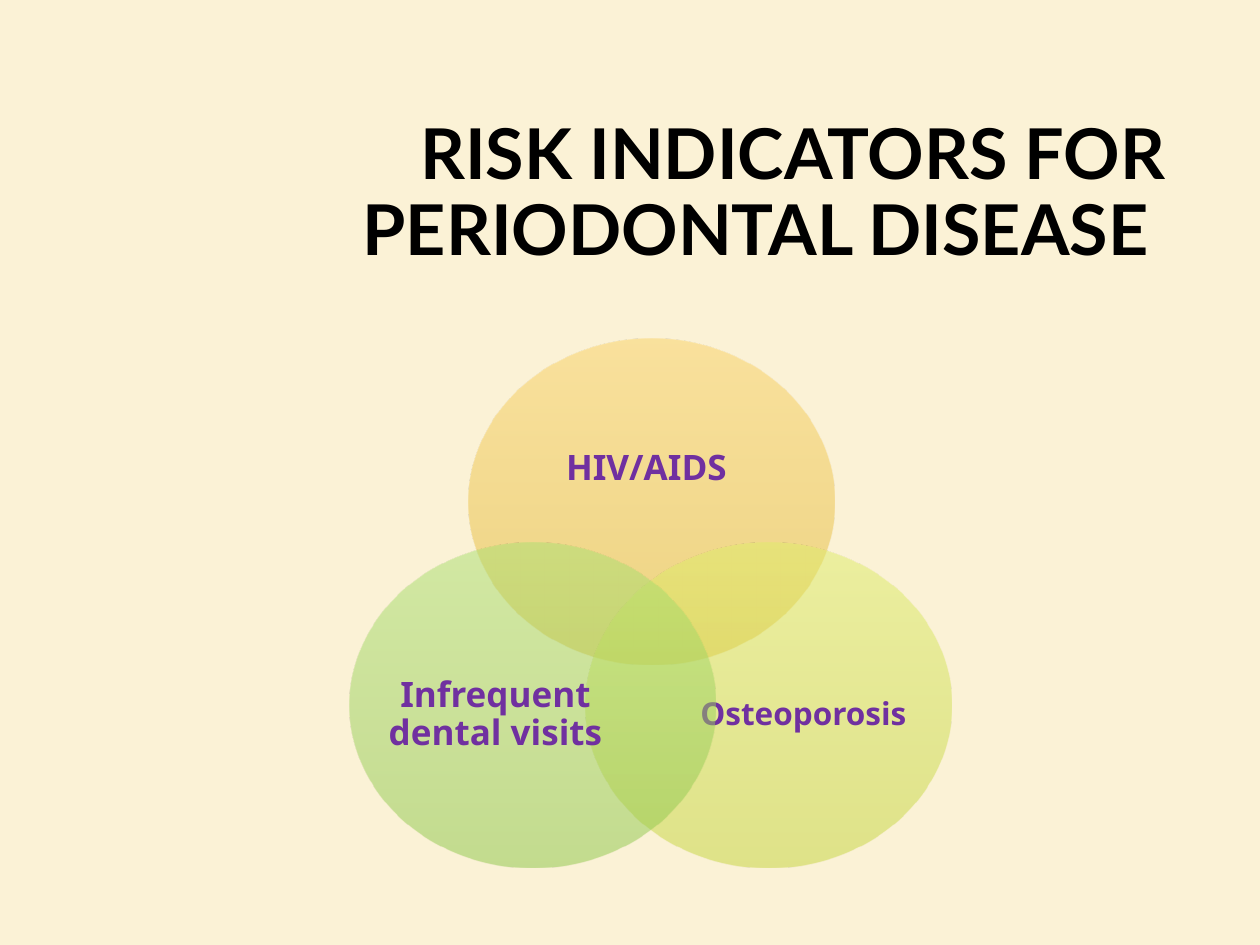
from dataclasses import dataclass

from lxml.etree import SubElement
from pptx import Presentation
from pptx.dml.color import RGBColor
from pptx.enum.shapes import MSO_SHAPE
from pptx.enum.text import MSO_ANCHOR, MSO_AUTO_SIZE, PP_ALIGN
from pptx.oxml.ns import qn
from pptx.util import Emu, Inches, Pt

PX = 914400 / 126
CIRCLE_W, CIRCLE_H = 365, 325
OPACITY = 50
STOPS = (0, 60, 100)
PURPLE = "7030A0"


@dataclass
class Circle:
    left: int
    top: int
    colors: tuple[str, str, str]
    label: str
    label_box: tuple[int, int, int, int]
    size: int = 20


CIRCLES = [
    Circle(469, 339, ("FAD164", "EAC044", "E3B52F"), "HIV/AIDS ",
           (517, 396, 268, 146)),
    Circle(586, 543, ("DFED69", "CEDD4F", "C5D43B"), "Osteoporosis ",
           (698, 626, 219, 179), 18),
    Circle(350, 543, ("ABE071", "9ACF5A", "8CC647"), "Infrequent dental visits ",
           (386, 626, 219, 179)),
]


def px(*lengths: int) -> list[Emu]:
    return [Emu(round(n * PX)) for n in lengths]


def rgb(color: str) -> RGBColor:
    return RGBColor.from_string(color)


def set_gradient(sp, colors: tuple[str, ...]) -> None:
    """Fill from top to bottom with translucent stops."""
    sp.fill.gradient()
    grad = sp._element.spPr.find(qn("a:gradFill"))
    stops = grad.find(qn("a:gsLst"))
    for old in list(stops):
        stops.remove(old)
    for pos, color in zip(STOPS, colors):
        gs = SubElement(stops, qn("a:gs"), pos=str(pos * 1000))
        clr = SubElement(gs, qn("a:srgbClr"), val=color)
        SubElement(clr, qn("a:alpha"), val=str(OPACITY * 1000))
    grad.find(qn("a:lin")).set("ang", str(90 * 60000))


def set_text(tf, text: str, font: str, size: int, color: str, align) -> None:
    tf.word_wrap = True
    tf.auto_size = MSO_AUTO_SIZE.NONE
    tf.vertical_anchor = MSO_ANCHOR.MIDDLE
    p = tf.paragraphs[0]
    p.text = text
    p.alignment = align
    p.line_spacing = 0.9
    p.font.name = font
    p.font.size = Pt(size)
    p.font.bold = True
    p.font.color.rgb = rgb(color)


def draw_circle(shapes, c: Circle) -> None:
    sp = shapes.add_shape(MSO_SHAPE.OVAL, *px(c.left, c.top, CIRCLE_W, CIRCLE_H))
    sp.shadow.inherit = False
    sp.line.fill.background()
    set_gradient(sp, c.colors)
    tf = shapes.add_textbox(*px(*c.label_box)).text_frame
    tf.margin_left = tf.margin_right = tf.margin_top = tf.margin_bottom = 0
    set_text(tf, c.label, "Noto Sans", c.size, PURPLE, PP_ALIGN.CENTER)


def main() -> None:
    prs = Presentation()
    prs.slide_width, prs.slide_height = Inches(10), Inches(7.5)
    s = prs.slides.add_slide(prs.slide_layouts[5])
    s.background.fill.solid()
    s.background.fill.fore_color.rgb = rgb("FBF2D6")

    title = s.shapes.title
    title.left, title.top, title.width, title.height = px(300, 106, 878, 178)
    set_text(title.text_frame, "RISK INDICATORS FOR PERIODONTAL DISEASE ",
             "Lato", 40, "000000", PP_ALIGN.RIGHT)

    group = s.shapes.add_group_shape()
    for circle in CIRCLES:
        draw_circle(group.shapes, circle)
    prs.save("out.pptx")


if __name__ == "__main__":
    main()
